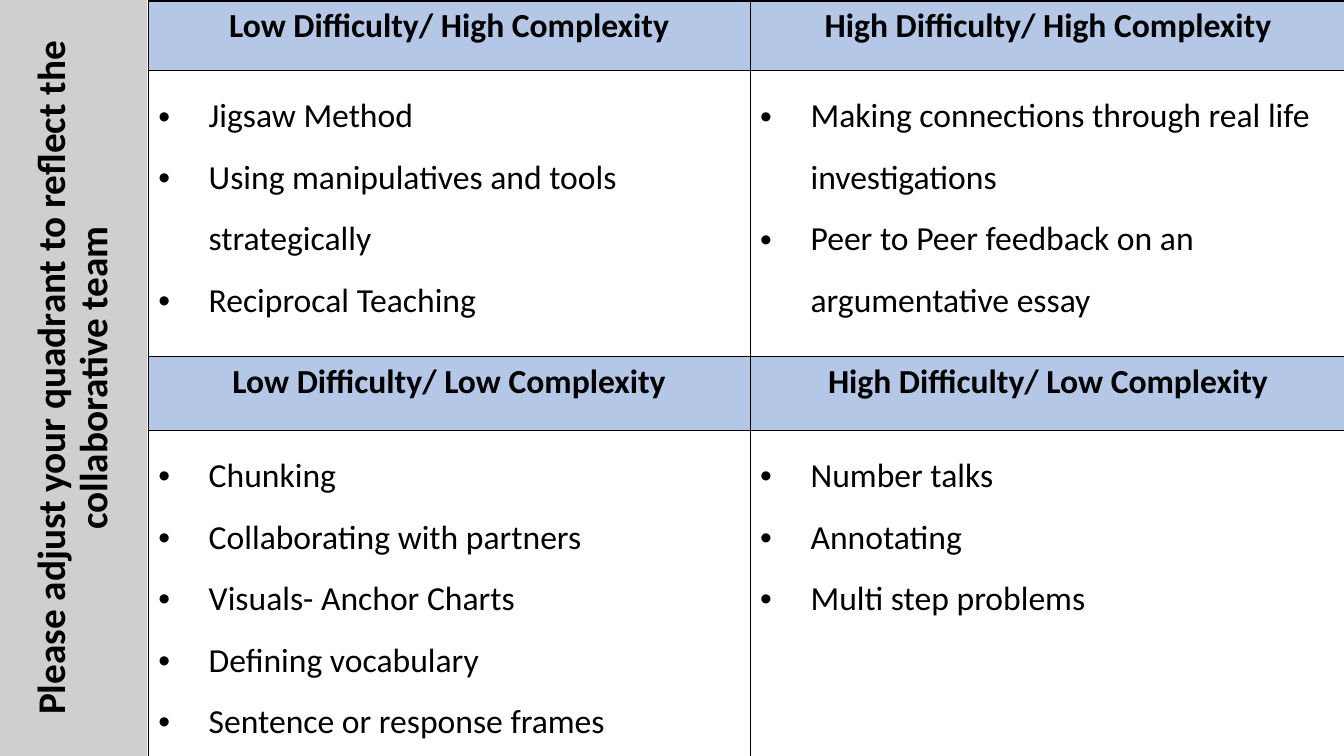
import pptx
import pptx.dml.color
import pptx.enum.text
import pptx.oxml
import pptx.oxml.ns
import pptx.util
from dataclasses import dataclass

TITLE = "Please adjust your quadrant to reflect the collaborative team"
# Each band holds its quadrants from left to right: heading, strategies
BANDS = [
    [
        ("Low Difficulty/ High Complexity",
         ["Jigsaw Method",
          "Using manipulatives and tools strategically",
          "Reciprocal Teaching"]),
        ("High Difficulty/ High Complexity",
         ["Making connections through real life investigations",
          "Peer to Peer feedback on an argumentative essay"]),
    ],
    [
        ("Low Difficulty/ Low Complexity",
         ["Chunking",
          "Collaborating with partners",
          "Visuals- Anchor Charts",
          "Defining vocabulary",
          "Sentence or response frames"]),
        ("High Difficulty/ Low Complexity",
         ["Number talks", "Annotating", "Multi step problems"]),
    ],
]


@dataclass(frozen=True)
class Theme:
    font: str = "Calibri"
    ink: str = "000000"
    sidebar: str = "D0CECE"
    heading: str = "B4C7E7"
    paper: str = "FFFFFF"
    title_size: int = 28
    table_size: int = 24
    border_width: int = 1


THEME = Theme()
Inches = pptx.util.Inches
PAGE_WIDTH, PAGE_HEIGHT = 13.33, 7.5
SIDEBAR_WIDTH = 1.46
TABLE_LEFT, TABLE_TOP = 1.47, 0.01
COLUMN_WIDTHS = [5.97, 5.91]
ROW_HEIGHTS = [0.69, 2.84, 0.73, 3.25]
BULLET_INDENT = 0.5
CENTER = pptx.enum.text.PP_ALIGN.CENTER


def set_fill(target, colour):
    target.fill.solid()
    target.fill.fore_color.rgb = pptx.dml.color.RGBColor.from_string(colour)


def add_span(para, text, size, bold):
    span = para.add_run()
    span.text = text
    span.font.name = THEME.font
    span.font.size = pptx.util.Pt(size)
    span.font.bold = bold
    span.font.color.rgb = pptx.dml.color.RGBColor.from_string(THEME.ink)


def add_borders(cell):
    properties = cell._tc.get_or_add_tcPr()
    width = pptx.util.Pt(THEME.border_width)
    for side in ("lnL", "lnR", "lnT", "lnB"):
        properties.append(pptx.oxml.parse_xml(
            f'<a:{side} {pptx.oxml.ns.nsdecls("a")} w="{width}"><a:solidFill>'
            f'<a:srgbClr val="{THEME.ink}"/></a:solidFill></a:{side}>'))


def add_bullet(para):
    properties = para._p.get_or_add_pPr()
    indent = Inches(BULLET_INDENT)
    properties.set("marL", str(indent))
    properties.set("indent", str(-indent))
    for tag in ('buFont typeface="Arial"', 'buChar char="•"'):
        properties.append(pptx.oxml.parse_xml(
            f'<a:{tag} {pptx.oxml.ns.nsdecls("a")}/>'))


def fill_heading(cell, heading):
    add_borders(cell)
    set_fill(cell, THEME.heading)
    para = cell.text_frame.paragraphs[0]
    para.alignment = CENTER
    add_span(para, heading, THEME.table_size, True)


def fill_strategies(cell, strategies):
    add_borders(cell)
    set_fill(cell, THEME.paper)
    frame = cell.text_frame
    for index, strategy in enumerate(strategies):
        para = frame.add_paragraph() if index else frame.paragraphs[0]
        para.line_spacing = 1.5
        add_bullet(para)
        add_span(para, strategy, THEME.table_size, False)


def add_sidebar_title(page):
    """Turn the title upright so that it fills the left edge of the page."""
    title = page.shapes.title
    title.left = Inches((SIDEBAR_WIDTH - PAGE_HEIGHT) / 2)
    title.top = Inches((PAGE_HEIGHT - SIDEBAR_WIDTH) / 2)
    title.width, title.height = Inches(PAGE_HEIGHT), Inches(SIDEBAR_WIDTH)
    title.rotation = 270
    set_fill(title, THEME.sidebar)
    frame = title.text_frame
    frame.word_wrap = True
    frame.auto_size = pptx.enum.text.MSO_AUTO_SIZE.NONE
    frame.vertical_anchor = pptx.enum.text.MSO_ANCHOR.MIDDLE
    para = frame.paragraphs[0]
    para.alignment = CENTER
    para.line_spacing = 0.9
    add_span(para, TITLE, THEME.title_size, True)


def add_quadrants(page):
    table = page.shapes.add_table(
        len(ROW_HEIGHTS), len(COLUMN_WIDTHS),
        Inches(TABLE_LEFT), Inches(TABLE_TOP),
        Inches(sum(COLUMN_WIDTHS)), Inches(sum(ROW_HEIGHTS))).table
    for column, width in zip(table.columns, COLUMN_WIDTHS):
        column.width = Inches(width)
    for row, height in zip(table.rows, ROW_HEIGHTS):
        row.height = Inches(height)
    for band_index, band in enumerate(BANDS):
        for column, (heading, strategies) in enumerate(band):
            fill_heading(table.cell(2 * band_index, column), heading)
            fill_strategies(table.cell(2 * band_index + 1, column), strategies)


def main():
    deck = pptx.Presentation()
    deck.slide_width, deck.slide_height = Inches(PAGE_WIDTH), Inches(PAGE_HEIGHT)
    page = deck.slides.add_slide(deck.slide_layouts.get_by_name("Title Only"))
    add_sidebar_title(page)
    add_quadrants(page)
    deck.save("out.pptx")


if __name__ == "__main__":
    main()
